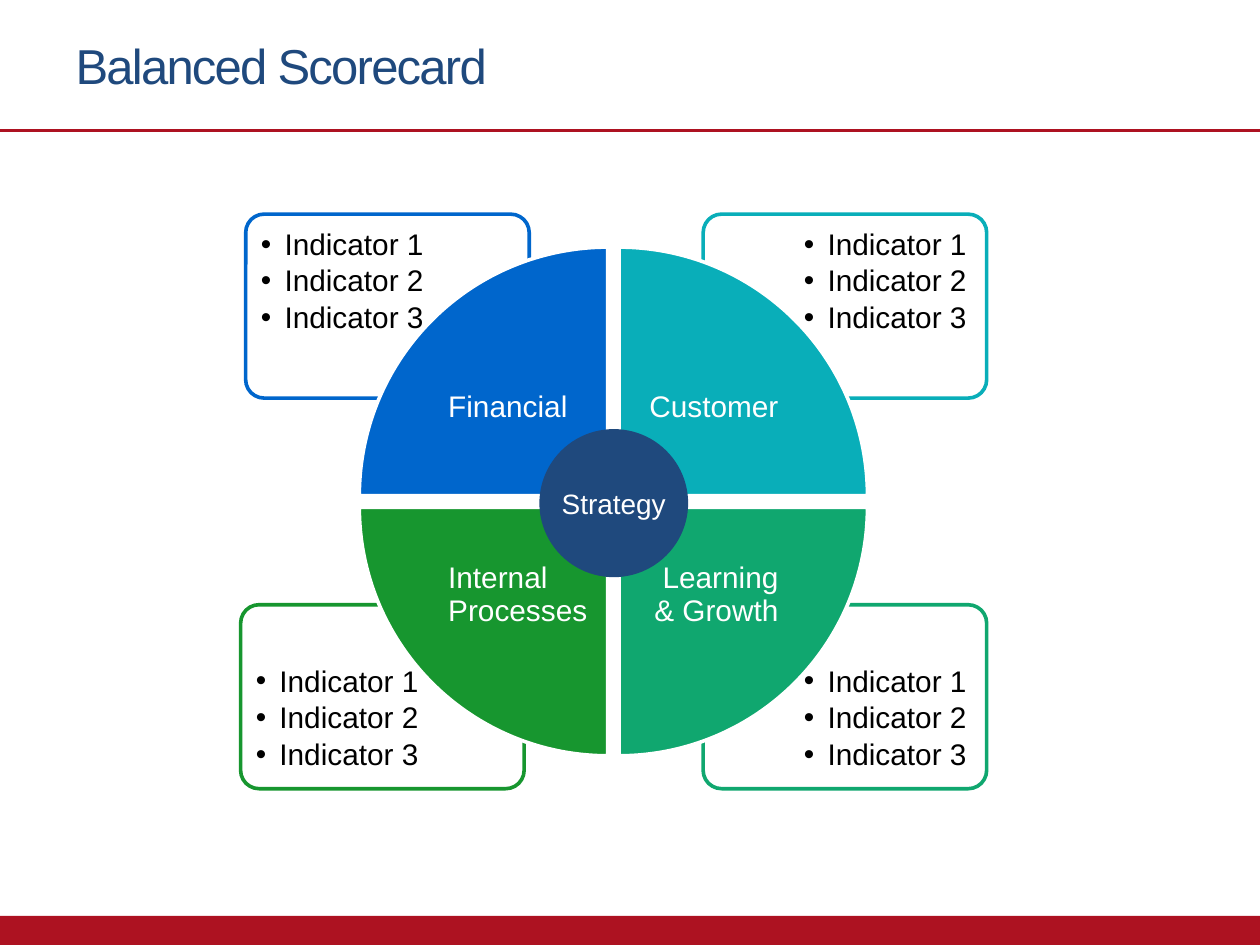
from lxml import etree
from pptx import Presentation
from pptx.dml.color import RGBColor
from pptx.enum.shapes import MSO_CONNECTOR, MSO_SHAPE
from pptx.enum.text import MSO_ANCHOR, MSO_AUTO_SIZE, PP_ALIGN
from pptx.oxml.ns import qn
from pptx.util import Pt

RECTANGLE, ROUNDED = MSO_SHAPE.RECTANGLE, MSO_SHAPE.ROUNDED_RECTANGLE
WEDGE, OVAL = MSO_SHAPE.PIE_WEDGE, MSO_SHAPE.OVAL
LEFT, CENTER, RIGHT = PP_ALIGN.LEFT, PP_ALIGN.CENTER, PP_ALIGN.RIGHT
TOP, MIDDLE = MSO_ANCHOR.TOP, MSO_ANCHOR.MIDDLE
STRAIGHT = MSO_CONNECTOR.STRAIGHT
NO_AUTOFIT = MSO_AUTO_SIZE.NONE

FONT = "Arial"
RED, NAVY, WHITE, BLACK = "AD1221", "1F497D", "FFFFFF", "000000"
OUTLINE = 2.08
INDICATORS = ("Indicator 1", "Indicator 2", "Indicator 3")

CARD_WIDTH, CARD_HEIGHT = 162, 105.1
CARD_TOPS = (122.4, 345.6)
LIST_WIDTH, LIST_HEIGHT = 108.7, 74.2
LIST_INSET = 2.2
WEDGE_SIZE, LABEL_SIZE = 142, 100.6
WEDGE_LEFTS = (205.3, 353.7)
WEDGE_TOPS = (141.2, 289.9)

# label lines, row, column, rotation, colour, card left
QUADRANTS = (
    (("Financial",), 0, 0, 0, "0066CC", 140.4),
    (("Customer",), 0, 1, 90, "09AEB9", 401.8),
    (("Learning", "& Growth"), 1, 1, 180, "10A76F", 401.8),
    (("Internal Processes",), 1, 0, 270, "17962F", 137.5),
)


def rgb(value):
    return RGBColor.from_string(value)


def add_block(slide, kind, box, fill, line=None):
    shape = slide.shapes.add_shape(kind, *map(Pt, box))
    shape.shadow.inherit = False
    shape.fill.solid()
    shape.fill.fore_color.rgb = rgb(fill)
    if line:
        shape.line.color.rgb = rgb(line)
        shape.line.width = Pt(OUTLINE)
    else:
        shape.line.fill.background()
    return shape


def add_run(paragraph, text, size, color):
    run = paragraph.add_run()
    run.text = text
    run.font.name = FONT
    run.font.size = Pt(size)
    run.font.color.rgb = rgb(color)
    return run


def format_frame(frame, insets, anchor=TOP):
    """Set the insets, given as left, top, right and bottom, and the anchor."""
    frame.word_wrap = True
    frame.vertical_anchor = anchor
    (frame.margin_left, frame.margin_top,
     frame.margin_right, frame.margin_bottom) = map(Pt, insets)


def add_text_frame(slide, box, insets, anchor=TOP):
    frame = slide.shapes.add_textbox(*map(Pt, box)).text_frame
    format_frame(frame, insets, anchor)
    return frame


def set_bullet(paragraph, indent):
    properties = paragraph._p.get_or_add_pPr()
    properties.set("marL", str(Pt(indent)))
    properties.set("indent", str(Pt(-indent)))
    etree.SubElement(properties, qn("a:buFont")).set("typeface", FONT)
    etree.SubElement(properties, qn("a:buChar")).set("char", "•")


def add_title(slide):
    title = slide.shapes.title
    title.left, title.top, title.width, title.height = map(
        Pt, (36, 11, 524.9, 51.8))
    frame = title.text_frame
    frame.auto_size = NO_AUTOFIT
    format_frame(frame, (7.2, 0, 7.2, 0), MIDDLE)
    paragraph = frame.paragraphs[0]
    paragraph.alignment = LEFT
    run = add_run(paragraph, "Balanced Scorecard", 28, NAVY)
    run.font._element.set("spc", "-100")


def add_page_frame(slide):
    add_block(slide, RECTANGLE, (0, 523.4, 720, 16.6), RED)
    rule = slide.shapes.add_connector(STRAIGHT, *map(Pt, (0, 74.6, 720, 74.6)))
    rule.line.color.rgb = rgb(RED)
    rule.line.width = Pt(1.5)
    etree.SubElement(rule._element.spPr, qn("a:effectLst"))


def add_card(slide, row, column, color, left):
    """Outlined card with its indicator list in the outer corner."""
    top = CARD_TOPS[row]
    card = add_block(slide, ROUNDED, (left, top, CARD_WIDTH, CARD_HEIGHT),
                     WHITE, color)
    card.adjustments[0] = 0.1
    list_left = left + LIST_INSET + column * (
        CARD_WIDTH - LIST_WIDTH - 2 * LIST_INSET)
    list_top = top + LIST_INSET + row * (
        CARD_HEIGHT - LIST_HEIGHT - 2 * LIST_INSET)
    frame = add_text_frame(
        slide, (list_left, list_top, LIST_WIDTH, LIST_HEIGHT), (6.5,) * 4)
    for index, indicator in enumerate(INDICATORS):
        paragraph = frame.add_paragraph() if index else frame.paragraphs[0]
        paragraph.line_spacing = 0.9
        paragraph.space_after = Pt(2.7)
        set_bullet(paragraph, 13.5)
        add_run(paragraph, indicator, 17, BLACK)


def add_quadrant(slide, lines, row, column, rotation, color):
    """Wedge with its label in the square nearest the centre."""
    left, top = WEDGE_LEFTS[column], WEDGE_TOPS[row]
    wedge = add_block(slide, WEDGE, (left, top, WEDGE_SIZE, WEDGE_SIZE),
                      color, WHITE)
    wedge.rotation = rotation
    offset = WEDGE_SIZE - LABEL_SIZE
    box = (left + offset * (1 - column), top + offset * (1 - row),
           LABEL_SIZE, LABEL_SIZE)
    paragraph = add_text_frame(slide, box, (9.4,) * 4, MIDDLE).paragraphs[0]
    paragraph.alignment = RIGHT if column else LEFT
    paragraph.line_spacing = 0.9
    for index, line in enumerate(lines):
        if index:
            paragraph.add_line_break()
        add_run(paragraph, line, 17, WHITE)


def add_hub(slide):
    hub = add_block(slide, OVAL, (308.2, 245.2, 85, 84.6), NAVY)
    format_frame(hub.text_frame, (0, 3.6, 0, 3.6), MIDDLE)
    paragraph = hub.text_frame.paragraphs[0]
    paragraph.alignment = CENTER
    add_run(paragraph, "Strategy", 16, WHITE)


def main():
    presentation = Presentation()
    presentation.slide_width, presentation.slide_height = Pt(720), Pt(540)
    slide = presentation.slides.add_slide(presentation.slide_layouts[5])
    add_page_frame(slide)
    add_title(slide)
    for _, row, column, _, color, card_left in QUADRANTS:
        add_card(slide, row, column, color, card_left)
    for lines, row, column, rotation, color, _ in QUADRANTS:
        add_quadrant(slide, lines, row, column, rotation, color)
    add_hub(slide)
    presentation.save("out.pptx")


if __name__ == "__main__":
    main()
